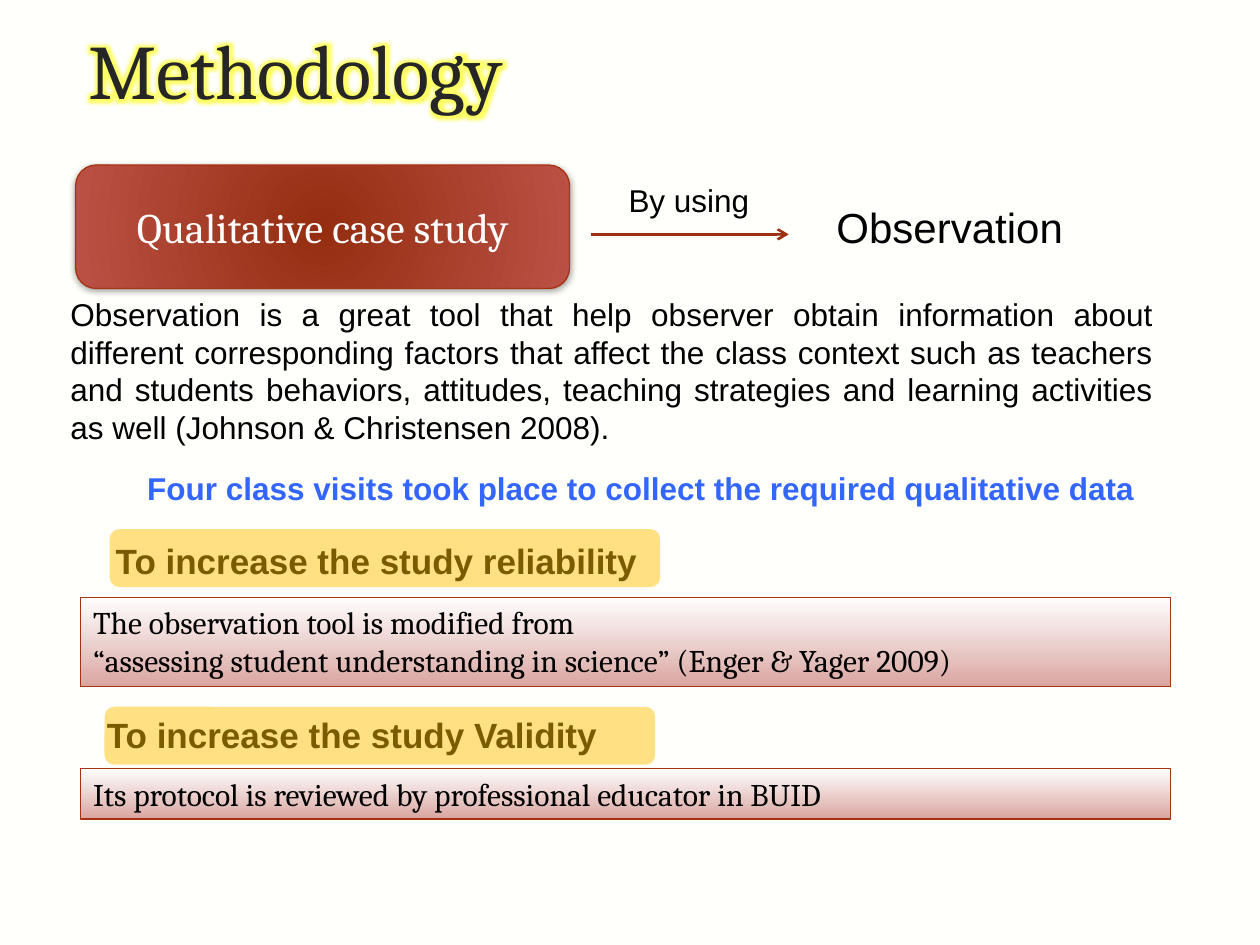
from pptx import Presentation
from pptx.dml.color import RGBColor as RGB
from pptx.enum.shapes import MSO_CONNECTOR as Connector, MSO_SHAPE as Shape
from pptx.enum.text import MSO_ANCHOR as Anchor, MSO_AUTO_SIZE as AutoSize, PP_ALIGN as Align
from pptx.oxml import parse_xml
from pptx.oxml.ns import nsdecls, qn
from pptx.util import Inches, Pt

COLORS = {
    "paper": "FFFFFB", "title": "262626", "glow": "FFFF00", "text": "000000",
    "white": "FFFFFF", "accent": "3366FF", "brick": "A63212", "arrow": "9F3011",
    "core": "952D10", "rim": "BA5145", "blush": "DAA5A0", "amber": "FFC000",
}
RADIAL = ('<a:path path="circle"><a:fillToRect l="40000" t="100000" '
          'r="40000" b="100000"/></a:path>')
VERTICAL = '<a:lin ang="5400000" scaled="0"/>'


def rgb(name):
    return RGB.from_string(COLORS[name])


def color_xml(name, alpha=100):
    return f'<a:srgbClr val="{COLORS[name]}"><a:alpha val="{alpha * 1000}"/></a:srgbClr>'


def effects(content=""):
    return parse_xml(f'<a:effectLst {nsdecls("a")}>{content}</a:effectLst>')


def write(shape, lines, size, font="Arial", color="text", bold=False,
          align=Align.LEFT, anchor=Anchor.TOP, wrap=True, grow=False):
    frame = shape.text_frame
    layout = {
        "word_wrap": wrap,
        "vertical_anchor": anchor,
        "auto_size": AutoSize.SHAPE_TO_FIT_TEXT if grow else AutoSize.NONE,
    }
    for name, value in layout.items():
        setattr(frame, name, value)
    for index, line in enumerate(lines):
        paragraph = frame.add_paragraph() if index else frame.paragraphs[0]
        paragraph.alignment = align
        run = paragraph.add_run()
        run.text = line
        run.font.color.rgb = rgb(color)
        for name, value in {"size": Pt(size), "name": font, "bold": bold}.items():
            setattr(run.font, name, value)


def add_text(slide, box, line, size, **style):
    label = slide.shapes.add_textbox(*map(Inches, box))
    write(label, [line], size, **style)
    return label


def add_panel(slide, kind, box, line=None):
    panel = slide.shapes.add_shape(kind, *map(Inches, box))
    panel.shadow.inherit = False
    if line:
        panel.line.color.rgb = rgb(line)
        panel.line.width = Pt(0.75)
    else:
        panel.line.fill.background()
    return panel


def fill_panel(panel, fill):
    properties = panel._element.spPr
    properties.find(qn("a:prstGeom")).addnext(parse_xml(fill))


def gradient(start, end, direction):
    return (f'<a:gradFill {nsdecls("a")} rotWithShape="1"><a:gsLst>'
            f'<a:gs pos="0">{start}</a:gs><a:gs pos="100000">{end}</a:gs>'
            f'</a:gsLst>{direction}</a:gradFill>')


def add_title(slide):
    title = add_text(slide, (0.6, 0.32, 8.79, 0.35), "Methodology", 44,
                     font="Cambria", color="title", anchor=Anchor.MIDDLE)
    title.text_frame.margin_top = Inches(0.1)
    title.text_frame.margin_bottom = 0
    run_properties = title.text_frame.paragraphs[0].runs[0].font._element
    glow = f'<a:glow rad="101600">{color_xml("glow", 60)}</a:glow>'
    run_properties.find(qn("a:latin")).addprevious(effects(glow))


def add_method(slide):
    method = add_panel(slide, Shape.ROUNDED_RECTANGLE, (0.6, 1.31, 3.92, 0.98), "brick")
    fill_panel(method, gradient(color_xml("core"), color_xml("rim"), RADIAL))
    method._element.spPr.find(qn("a:effectLst")).append(parse_xml(
        f'<a:outerShdw {nsdecls("a")} blurRad="50800" dist="12700" dir="5400000" '
        f'rotWithShape="0">{color_xml("text", 37)}</a:outerShdw>'))
    write(method, ["Qualitative case study"], 24, font="Cambria", color="white",
          align=Align.CENTER, anchor=Anchor.MIDDLE)


def add_arrow(slide, left, right, y):
    arrow = slide.shapes.add_connector(
        Connector.STRAIGHT, *map(Inches, (left, y, right, y)))
    arrow.line.color.rgb = rgb("arrow")
    arrow.line.width = Pt(1.5)
    arrow.line._get_or_add_ln().append(
        parse_xml(f'<a:tailEnd {nsdecls("a")} type="arrow"/>'))
    arrow._element.spPr.append(effects())


def add_evidence(slide, top, height, lines):
    evidence = add_panel(slide, Shape.RECTANGLE, (0.64, top, 8.65, height), "brick")
    fill_panel(evidence, gradient(color_xml("white", 94), color_xml("blush"), VERTICAL))
    write(evidence, lines, 18, font="Cambria", grow=True)


def add_goal(slide, text_box, line, marker_left, marker_top):
    add_text(slide, text_box, line, 20, bold=True)
    marker = add_panel(slide, Shape.ROUNDED_RECTANGLE,
                       (marker_left, marker_top, 4.37, 0.46))
    fill_panel(marker, f'<a:solidFill {nsdecls("a")}>{color_xml("amber", 48)}</a:solidFill>')


def main():
    deck = Presentation()
    deck.slide_width, deck.slide_height = Inches(10), Inches(7.5)
    slide = deck.slides.add_slide(deck.slide_layouts[6])
    slide.background.fill.solid()
    slide.background.fill.fore_color.rgb = rgb("paper")

    add_title(slide)
    add_method(slide)
    add_arrow(slide, 4.69, 6.26, 1.86)
    add_text(slide, (4.89, 1.39, 1.17, 0.4), "By using", 18, wrap=False, grow=True)
    add_text(slide, (6.54, 1.55, 2.02, 0.5), "Observation", 24, wrap=False, grow=True)
    add_text(slide, (0.46, 2.29, 8.79, 1.31),
             "Observation is a great tool that help observer obtain information about "
             "different corresponding factors that affect the class context such as "
             "teachers and students behaviors, attitudes, teaching strategies and "
             "learning activities as well (Johnson & Christensen 2008).",
             18, align=Align.JUSTIFY, grow=True)
    add_evidence(slide, 4.74, 0.71, [
        "The observation tool is modified from",
        "“assessing student understanding in science” (Enger & Yager 2009)"])
    add_goal(slide, (0.82, 4.23, 4.38, 0.74), "To increase the study reliability", 0.87, 4.2)
    add_goal(slide, (0.75, 5.61, 4.14, 0.74), "To increase the study Validity", 0.83, 5.61)
    add_evidence(slide, 6.1, 0.4,
                 ["Its protocol is reviewed by professional educator in BUID"])
    add_text(slide, (1.07, 3.67, 8.11, 0.4),
             "Four class visits took place to collect the required qualitative data",
             18, color="accent", bold=True, wrap=False, grow=True)
    deck.save("out.pptx")


if __name__ == "__main__":
    main()
